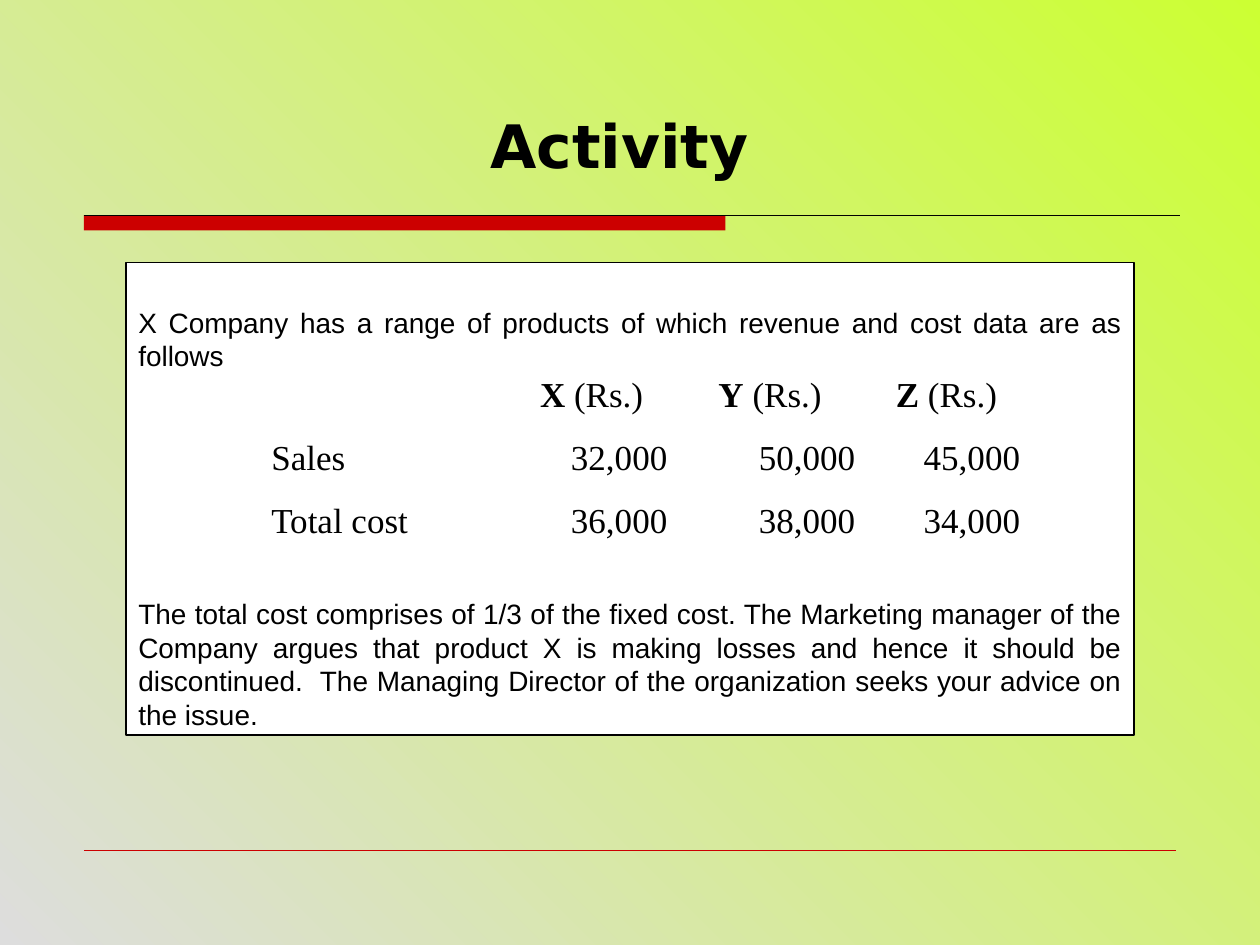
"""Build the Activity slide: a cost problem with its product table."""
from lxml.etree import SubElement
from pptx import Presentation
from pptx.dml.color import RGBColor
from pptx.enum.shapes import MSO_CONNECTOR, MSO_SHAPE
from pptx.enum.text import MSO_ANCHOR, PP_ALIGN
from pptx.oxml.ns import qn
from pptx.util import Inches, Pt

TITLE = "Activity"
INTRO = "X Company has a range of products of which revenue and cost data are as follows"
QUESTION = (
    "The total cost comprises of 1/3 of the fixed cost. The Marketing manager of the "
    "Company argues that product X is making losses and hence it should be discontinued.  "
    "The Managing Director of the organization seeks your advice on the issue."
)
PRODUCTS = ["X", "Y", "Z"]
UNIT = " (Rs.)"
ROWS = [
    ("Sales", "32,000", "50,000", "45,000"),
    ("Total cost", "36,000", "38,000", "34,000"),
]
THEME = {
    "ink": "000000", "paper": "FFFFFF", "accent": "CC0000",
    "bg": ("DDDDDD", "CCFF33"),
    "title": ("DejaVu Sans", 34.2), "body": ("Arial", 16), "table": ("Times New Roman", 20),
}
WIDTH, HEIGHT = Inches(10), Inches(7.5)
GRID_COLUMNS = 120
TITLE_AREA = (5, 7, 108, 13.5)
BAR_AREA = (8, 20.5, 61.1, 1.45)
PROBLEM_AREA = (12, 25, 96, 45)
TABLE_ORIGIN = (25, 34)
TABLE_COLUMNS = (23.3, 16.1, 17.9, 15.7)
TABLE_ROW = 5.64
RULES = [
    (8, 112.4, 20.5, "ink", 0.5),
    (8, 112, 81, "accent", 0.25),
]


def grid(*units):
    return [round(u * WIDTH / GRID_COLUMNS) for u in units]


def rgb(name):
    return RGBColor.from_string(THEME[name])


def style(p, role, align, bold=None):
    name, size = THEME[role]
    p.alignment = align
    p.font.name, p.font.size, p.font.bold = name, Pt(size), bold
    p.font.color.rgb = rgb("ink")


def add_background(s):
    fill = s.background.fill
    fill.gradient()
    fill.gradient_angle = 45
    for stop, color in zip(fill.gradient_stops, THEME["bg"]):
        stop.color.rgb = RGBColor.from_string(color)


def add_box(s, area, color):
    sp = s.shapes.add_shape(MSO_SHAPE.RECTANGLE, *grid(*area))
    sp.shadow.inherit = False
    sp.fill.solid()
    sp.fill.fore_color.rgb = rgb(color)
    sp.line.fill.background()
    return sp


def add_rule(s, left, right, y, color, width):
    line = s.shapes.add_connector(MSO_CONNECTOR.STRAIGHT, *grid(left, y, right, y))
    line.line.color.rgb = rgb(color)
    line.line.width = Pt(width)
    SubElement(line._element.spPr, qn("a:effectLst"))


def add_title(s):
    tf = s.shapes.add_textbox(*grid(*TITLE_AREA)).text_frame
    tf.word_wrap = True
    tf.vertical_anchor = MSO_ANCHOR.MIDDLE
    p = tf.paragraphs[0]
    p.text = TITLE
    style(p, "title", PP_ALIGN.CENTER, True)


def add_problem(s):
    sp = add_box(s, PROBLEM_AREA, "paper")
    sp.line.color.rgb = rgb("ink")
    sp.line.width = Pt(0.75)
    tf = sp.text_frame
    tf.word_wrap = True
    tf.vertical_anchor = MSO_ANCHOR.TOP
    tf.margin_top = Inches(0.34)
    tf.text = f"{INTRO}\n{QUESTION}"
    for p in tf.paragraphs:
        style(p, "body", PP_ALIGN.JUSTIFY)
    tf.paragraphs[1].space_before = Pt(128)


def add_cost_table(s):
    size = grid(sum(TABLE_COLUMNS), TABLE_ROW * (len(ROWS) + 1))
    table = s.shapes.add_table(
        len(ROWS) + 1, len(TABLE_COLUMNS), *grid(*TABLE_ORIGIN), *size).table
    table.first_row = table.horz_banding = False
    for column, width in zip(table.columns, grid(*TABLE_COLUMNS)):
        column.width = width
    for r, values in enumerate([("", *PRODUCTS), *ROWS]):
        for c, value in enumerate(values):
            cell = table.cell(r, c)
            cell.fill.background()
            cell.margin_left = cell.margin_right = Inches(0.07)
            cell.margin_top = cell.margin_bottom = 0
            p = cell.text_frame.paragraphs[0]
            p.line_spacing = 1.5
            if c == 0:
                align = PP_ALIGN.JUSTIFY
            else:
                align = PP_ALIGN.RIGHT if r else PP_ALIGN.CENTER
            style(p, "table", align)
            run = p.add_run()
            run.text = value
            if r == 0 and value:
                run.font.bold = True
                p.add_run().text = UNIT


def main():
    prs = Presentation()
    prs.slide_width, prs.slide_height = WIDTH, HEIGHT
    s = prs.slides.add_slide(prs.slide_layouts[6])
    add_background(s)
    add_box(s, BAR_AREA, "accent")
    for rule in RULES:
        add_rule(s, *rule)
    add_title(s)
    add_problem(s)
    add_cost_table(s)
    prs.save("out.pptx")


if __name__ == "__main__":
    main()
